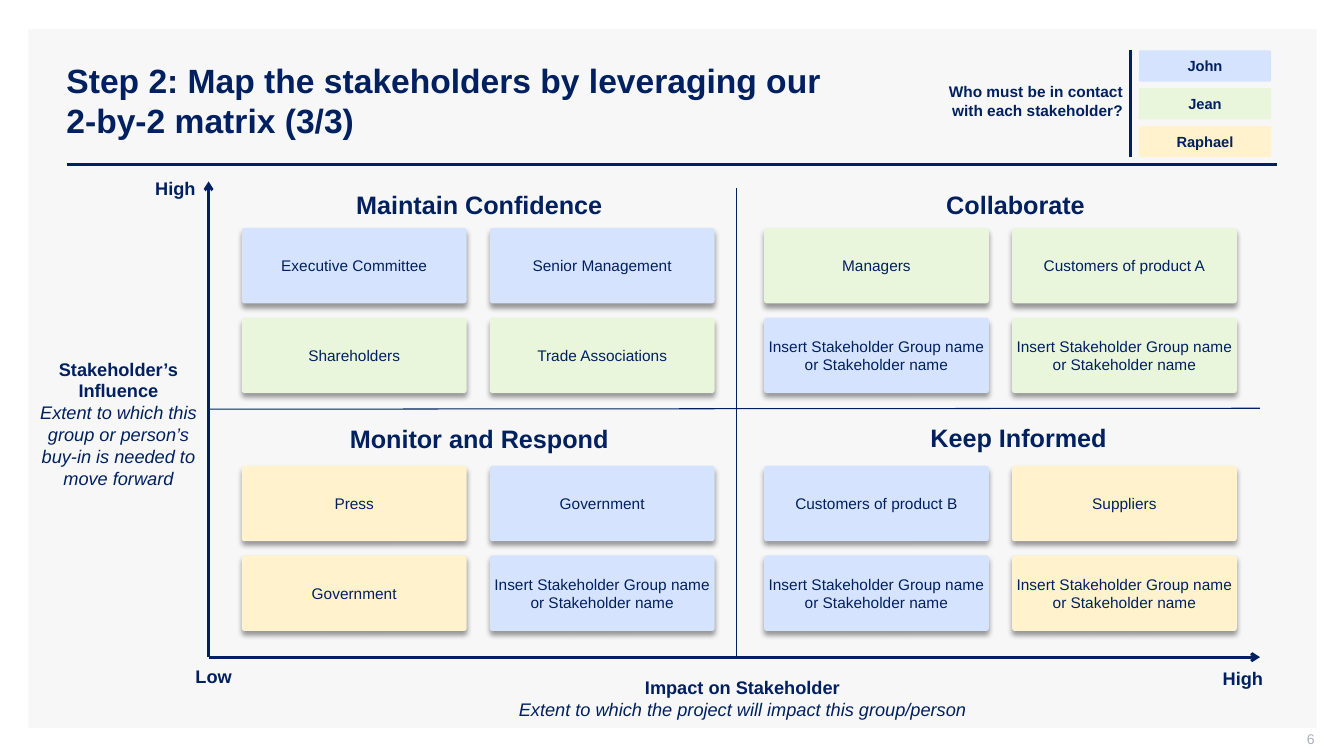
from itertools import product

from lxml.etree import SubElement
from pptx import Presentation
from pptx.dml.color import RGBColor
from pptx.enum.shapes import MSO_CONNECTOR, MSO_SHAPE
from pptx.enum.text import MSO_ANCHOR, PP_ALIGN
from pptx.oxml.ns import qn
from pptx.util import Pt

COLORS = {"navy": "002060", "panel": "F7F7F7", "number": "ADAFBB", "shadow": "000000",
          "John": "D6E3FF", "Jean": "E9F6DC", "Raphael": "FFF2CC"}
LEFT, CENTER, RIGHT = PP_ALIGN.LEFT, PP_ALIGN.CENTER, PP_ALIGN.RIGHT
SNUG = (5.04, 2.88, 5.04, 2.88)
CARD = (1.44, 3.6, 1.44, 3.6)
SPARE = "Insert Stakeholder Group name or Stakeholder name"
QUADRANTS = [
    ("Maintain Confidence", (193.4, 2.9),
     [("Executive Committee", "John"), ("Senior Management", "John"),
      ("Shareholders", "Jean"), ("Trade Associations", "Jean")]),
    ("Collaborate", (576.4, 2.9),
     [("Managers", "Jean"), ("Customers of product A", "Jean"),
      (SPARE, "John"), (SPARE, "Jean")]),
    ("Monitor and Respond", (193.4, 169.9),
     [("Press", "Raphael"), ("Government", "John"),
      ("Government", "Raphael"), (SPARE, "John")]),
    ("Keep Informed", (578.6, 169.2),
     [("Customers of product B", "John"), ("Suppliers", "Raphael"),
      (SPARE, "John"), (SPARE, "Raphael")]),
]


def color(name):
    """Return the named colour."""
    return RGBColor.from_string(COLORS[name])


def fill_text(shape, paras, size, align, insets, anchor, wrap=True, ink="navy"):
    """Write paragraphs of (text, style) spans, where style is b, i or empty."""
    frame = shape.text_frame
    frame.word_wrap = wrap
    frame.vertical_anchor = anchor
    (frame.margin_left, frame.margin_top,
     frame.margin_right, frame.margin_bottom) = map(Pt, insets)
    for index, spans in enumerate(paras):
        para = frame.add_paragraph() if index else frame.paragraphs[0]
        para.alignment = align
        for text, style in spans:
            span = para.add_run()
            span.text = text.rstrip("\n")
            font = span.font
            font.name, font.size = "Arial", Pt(size)
            font.bold, font.italic = style == "b", style == "i"
            font.color.rgb = color(ink)
            if text.endswith("\n"):
                para.add_line_break()


def add_text(page, box, paras, size, align=CENTER, insets=SNUG,
             anchor=MSO_ANCHOR.TOP, wrap=True, ink="navy"):
    """Add a text box."""
    shape = page.shapes.add_textbox(*map(Pt, box))
    fill_text(shape, paras, size, align, insets, anchor, wrap, ink)


def add_line(page, start, end, width, arrow=False):
    """Add a navy line, with an arrowhead at its end if asked."""
    line = page.shapes.add_connector(MSO_CONNECTOR.STRAIGHT, *map(Pt, (*start, *end)))
    line.line.color.rgb = color("navy")
    line.line.width = Pt(width)
    if arrow:
        SubElement(line.line._get_or_add_ln(), qn("a:tailEnd"), type="arrow")
    SubElement(line._element.spPr, qn("a:effectLst"))


def add_block(page, kind, box, fill):
    """Add a filled shape without outline or shadow."""
    shape = page.shapes.add_shape(kind, *map(Pt, box))
    shape.shadow.inherit = False
    shape.fill.solid()
    shape.fill.fore_color.rgb = color(fill)
    shape.line.fill.background()
    return shape


def add_card(page, box, text, owner, size, style="", raised=False):
    """Add a card in its owner's colour, raised by a soft shadow if asked."""
    card = add_block(page, MSO_SHAPE.ROUNDED_RECTANGLE, box, owner)
    card.adjustments[0] = 0.038
    fill_text(card, [[(text, style)]], size, CENTER, CARD, MSO_ANCHOR.MIDDLE)
    if raised:
        effects = card._element.spPr.find(qn("a:effectLst"))
        shadow = SubElement(effects, qn("a:outerShdw"), blurRad=str(Pt(4)),
                            dist=str(Pt(3)), dir="5400000", algn="t", rotWithShape="0")
        tint = SubElement(shadow, qn("a:srgbClr"), val=COLORS["shadow"])
        SubElement(tint, qn("a:alpha"), val="40000")


def add_frame(page, box):
    """Draw the panel, the title with its rule and the page number."""
    left, top, width, height = box
    add_block(page, MSO_SHAPE.RECTANGLE, box, "panel")
    add_line(page, (left + 27.4, top + 96.5), (left + 892.1, top + 96.5), 2)
    title = "Step 2: Map the stakeholders by leveraging our 2-by-2 matrix (3/3)"
    add_text(page, (left + 20.2, top + 7.9, 554.4, 85.7), [[(title, "b")]], 24, LEFT,
             (7.2, 3.6, 7.2, 3.6), MSO_ANCHOR.MIDDLE)
    add_text(page, (left + width - 217.4, top + height + 2.2, 216, 15.1), [[("6", "")]],
             10, RIGHT, (7.2, 0, 0, 3.6), MSO_ANCHOR.MIDDLE, ink="number")


def add_legend(page, box):
    """Draw the question and the colour key of contact people."""
    left, top, width, height = box
    question = "Who must be in contact with each stakeholder?"
    add_text(page, (left, top + 19.4, 154.1, 35.3), [[(question, "b")]], 11, RIGHT,
             (7.2, 3.6, 7.2, 3.6))
    add_line(page, (left + 152.6, top), (left + 152.6, top + height), 2.25)
    for row, owner in enumerate(("John", "Jean", "Raphael")):
        key = (left + width - 94.3, top + row * 27, 94.3, 22.3)
        add_card(page, key, owner, owner, 10.5, "b")


def add_quadrant(page, box, cards):
    """Lay four stakeholder cards out two by two."""
    left, top, width, height = box
    card_width, card_height = 160.56, 54
    for (row, column), (text, owner) in zip(product(range(2), repeat=2), cards):
        spot = (left + column * (width - card_width),
                top + row * (height - card_height), card_width, card_height)
        add_card(page, spot, text, owner, 11, raised=True)


def add_matrix(page, box):
    """Draw the axes, their labels and the four quadrants."""
    left, top, width, height = box
    right, bottom = left + width, top + height
    middle = left + 377.3
    add_line(page, (left, top + 162.7), (right, top + 162), 0.75)
    add_line(page, (middle, bottom), (middle, top + 5), 0.75)
    add_line(page, (left, bottom), (left, top), 2, True)
    add_line(page, (left, bottom), (right, bottom), 2, True)

    for text, x, y, label_width in (("High", left - 43.2, top - 5.8, 39.6),
                                    ("Low", left - 14.4, bottom + 2.9, 36.7),
                                    ("High", right - 31.7, bottom + 4.3, 39.6)):
        add_text(page, (x, y, label_width, 20.9), [[(text, "b")]], 13, LEFT, wrap=False)
    add_text(page, (left - 133.2, top + 123.1, 137.5, 99.4),
             [[("Stakeholder’s Influence", "b")],
              [("Extent to which this group or person’s buy-in is needed to move forward", "i")]],
             13)
    add_text(page, (left + 185, bottom + 10.8, 392.4, 43.9),
             [[("Impact on Stakeholder\n", "b"),
               ("Extent to which the project will impact this group/person", "i")]], 13)

    for (row, column), (name, (center, y), cards) in zip(product(range(2), repeat=2), QUADRANTS):
        add_text(page, (left + center - 98.5, top + y, 197, 26.6), [[(name, "b")]], 18,
                 wrap=False)
        add_quadrant(page, (left + 23.8 + column * 373, top + 33.1 + row * 169.9,
                            337.7, 118.1), cards)


def main():
    """Build the stakeholder map slide and save the deck."""
    deck = Presentation()
    deck.slide_width, deck.slide_height = Pt(960), Pt(540)
    page = deck.slides.add_slide(deck.slide_layouts[6])
    add_frame(page, (20.2, 20.9, 920.2, 499))
    add_legend(page, (655.2, 36, 252.7, 76.3))
    add_matrix(page, (149, 129.6, 751, 339.8))
    deck.save("out.pptx")


if __name__ == "__main__":
    main()
